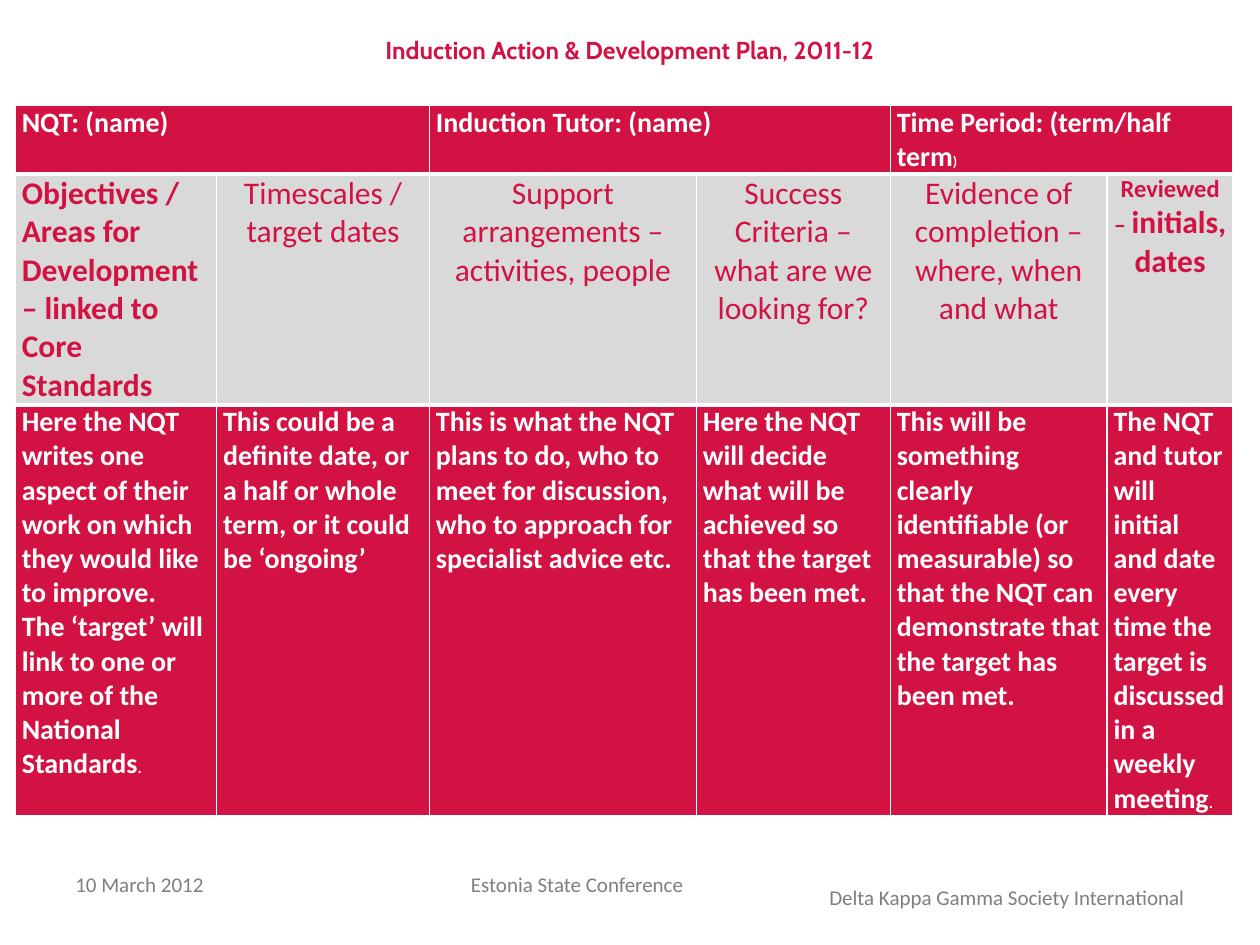
from lxml.etree import SubElement
from pptx import Presentation
from pptx.dml.color import RGBColor
from pptx.enum.text import MSO_ANCHOR as Anchor, MSO_AUTO_SIZE as AutoSize, PP_ALIGN as Align
from pptx.oxml.ns import qn
from pptx.util import Cm, Pt

CRIMSON, WHITE, PALE_GREY, FOOTER_GREY = "D21242", "FFFFFF", "D9D9D9", "7F7F7F"
TITLE_FONT, BODY_FONT = "Cabin", "Calibri"

COLUMN_WIDTHS = [4.06, 4.29, 5.38, 3.91, 4.37, 2.54]
ROW_HEIGHTS = [1.36, 4.65, 8.25]

DETAILS = ["NQT: (name)", "Induction Tutor: (name)", "Time Period: (term/half term"]
HEADINGS = [
    "Objectives / Areas for Development – linked to Core Standards",
    "Timescales / target dates",
    "Support arrangements – activities, people",
    "Success Criteria – what are we looking for?",
    "Evidence of completion – where, when and what",
    "Reviewed – ",
]
GUIDANCE = [
    "Here the NQT writes one aspect of their work on which they would like to improve.\n"
    "The ‘target’ will link to one or more of the National Standards",
    "This could be a definite date, or a half or whole term, or it could be ‘ongoing’",
    "This is what the NQT plans to do, who to meet for discussion, "
    "who to approach for specialist advice etc.",
    "Here the NQT will decide what will be achieved so that the target has been met.",
    "This will be something clearly identifiable (or measurable) so that the NQT "
    "can demonstrate that the target has been met.",
    "The NQT and tutor will initial and date every time the target is discussed "
    "in a weekly meeting",
]
FOOTERS = [
    ("10 March 2012", 1.27, 17.32, 5.92, Align.LEFT),
    ("Estonia State Conference", 7.19, 17.32, 8.89, Align.CENTER),
    ("Delta Kappa Gamma Society International", 16.08, 17.58, 8.05, Align.RIGHT),
]


def rgb(value):
    return RGBColor.from_string(value)


def format_run(run, size, color, bold=False, name=BODY_FONT):
    font = run.font
    font.name, font.size, font.bold = name, Pt(size), bold
    font.color.rgb = rgb(color)


def write_text(text_frame, text, size, color, bold=False, align=Align.LEFT, name=BODY_FONT):
    text_frame.text = text
    for paragraph in text_frame.paragraphs:
        paragraph.alignment = align
        for run in paragraph.runs:
            format_run(run, size, color, bold, name)


def append_run(cell, text, size, color, bold=False):
    run = cell.text_frame.paragraphs[-1].add_run()
    run.text = text
    format_run(run, size, color, bold)


def set_borders(cell, top, bottom):
    """Draw white cell borders; top and bottom are widths in points."""
    properties = cell._tc.get_or_add_tcPr()
    for side, width in (("L", 1), ("R", 1), ("T", top), ("B", bottom)):
        line = SubElement(properties, qn(f"a:ln{side}"), w=str(Pt(width)))
        fill = SubElement(line, qn("a:solidFill"))
        SubElement(fill, qn("a:srgbClr"), val=WHITE)


def style_cell(cell, fill, top, bottom):
    set_borders(cell, top, bottom)
    cell.fill.solid()
    cell.fill.fore_color.rgb = rgb(fill)
    cell.margin_left = cell.margin_right = Cm(0.13)
    cell.margin_top = cell.margin_bottom = 0


def add_title(slide, text):
    title = slide.shapes.title
    title.left, title.top, title.width, title.height = Cm(6.96), Cm(0.51), Cm(11.48), Cm(1)
    text_frame = title.text_frame
    text_frame.auto_size = AutoSize.NONE
    text_frame.vertical_anchor = Anchor.MIDDLE
    write_text(text_frame, text, 14, CRIMSON, True, Align.CENTER, TITLE_FONT)


def add_plan_table(slide):
    table = slide.shapes.add_table(
        len(ROW_HEIGHTS), len(COLUMN_WIDTHS), Cm(0.31), Cm(2.13),
        Cm(sum(COLUMN_WIDTHS)), Cm(sum(ROW_HEIGHTS))).table
    for column, width in zip(table.columns, COLUMN_WIDTHS):
        column.width = Cm(width)
    row_styles = [(CRIMSON, 1, 3), (PALE_GREY, 3, 3), (CRIMSON, 3, 1)]
    for row, height, style in zip(table.rows, ROW_HEIGHTS, row_styles):
        row.height = Cm(height)
        for cell in row.cells:
            style_cell(cell, *style)

    for index, text in enumerate(DETAILS):
        cell = table.cell(0, 2 * index)
        cell.merge(table.cell(0, 2 * index + 1))
        write_text(cell.text_frame, text, 16, WHITE, True)
    append_run(table.cell(0, 4), ")", 8, WHITE, True)

    last = len(HEADINGS) - 1
    for index, (heading, guidance) in enumerate(zip(HEADINGS, GUIDANCE)):
        write_text(table.cell(1, index).text_frame, heading,
                   14 if index == last else 18, CRIMSON, index in (0, last),
                   Align.LEFT if index == 0 else Align.CENTER)
        write_text(table.cell(2, index).text_frame, guidance, 16, WHITE, True)
    append_run(table.cell(1, last), "initials, dates", 18, CRIMSON, True)
    for index in (0, last):
        append_run(table.cell(2, index), ".", 9, WHITE, True)


def add_footer(slide, text, left, top, width, align):
    box = slide.shapes.add_textbox(Cm(left), Cm(top), Cm(width), Cm(1.01))
    text_frame = box.text_frame
    text_frame.word_wrap = True
    text_frame.vertical_anchor = Anchor.MIDDLE
    write_text(text_frame, text, 12, FOOTER_GREY, align=align)


def main():
    presentation = Presentation()
    presentation.slide_width, presentation.slide_height = Cm(25.4), Cm(19.05)
    slide = presentation.slides.add_slide(presentation.slide_layouts[5])
    add_title(slide, "Induction Action & Development Plan, 2011-12")
    add_plan_table(slide)
    for footer in FOOTERS:
        add_footer(slide, *footer)
    presentation.save("out.pptx")


if __name__ == "__main__":
    main()
